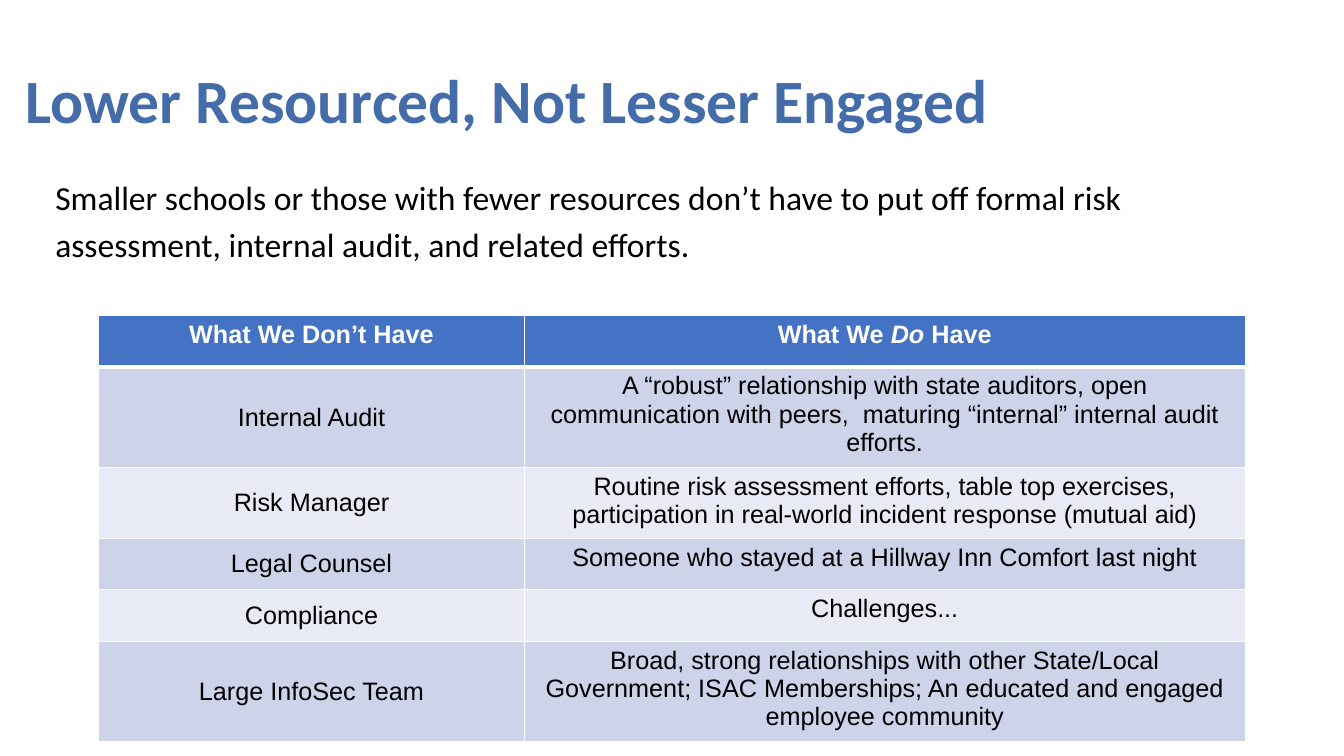
from lxml.etree import SubElement
from pptx import Presentation
from pptx.dml.color import RGBColor
from pptx.enum.text import MSO_ANCHOR, MSO_AUTO_SIZE, PP_ALIGN
from pptx.oxml.ns import qn
from pptx.util import Inches, Pt

TITLE_BLUE = RGBColor(0x44, 0x6C, 0xA9)
HEADER_BLUE = RGBColor(0x44, 0x72, 0xC4)
BAND_DARK = RGBColor(0xCD, 0xD4, 0xEA)
BAND_LIGHT = RGBColor(0xE8, 0xEB, 0xF5)
WHITE = RGBColor(0xFF, 0xFF, 0xFF)
BLACK = RGBColor(0x00, 0x00, 0x00)

COLUMN_WIDTHS = (4.22, 7.15)
HEADERS = (
    [("What We Don’t Have", False)],
    [("What We ", False), ("Do", True), (" Have", False)],
)
RESOURCES = (
    ("Internal Audit",
     "A “robust” relationship with state auditors, open communication "
     "with peers,  maturing “internal” internal audit efforts."),
    ("Risk Manager",
     "Routine risk assessment efforts, table top exercises, "
     "participation in real-world incident response (mutual aid)"),
    ("Legal Counsel",
     "Someone who stayed at a Hillway Inn Comfort last night"),
    ("Compliance", "Challenges..."),
    ("Large InfoSec Team",
     "Broad, strong relationships with other State/Local Government; "
     "ISAC Memberships; An educated and engaged employee community"),
)


def add_span(para, text, font, size, color, bold=False, italic=False):
    span = para.add_run()
    span.text = text
    span.font.name = font
    span.font.size = Pt(size)
    span.font.color.rgb = color
    span.font.bold = bold
    span.font.italic = italic


def place_title(page, left, top, width, height):
    title = page.shapes.title
    title.left, title.top = Inches(left), Inches(top)
    title.width, title.height = Inches(width), Inches(height)
    frame = title.text_frame
    frame.word_wrap = True
    frame.auto_size = MSO_AUTO_SIZE.NONE
    frame.vertical_anchor = MSO_ANCHOR.BOTTOM
    para = frame.paragraphs[0]
    para.alignment = PP_ALIGN.LEFT
    para.line_spacing = 0.9
    add_span(para, "Lower Resourced, Not Lesser Engaged",
             "Calibri", 44, TITLE_BLUE, bold=True)


def add_introduction(page, left, top, width, height):
    box = page.shapes.add_textbox(Inches(left), Inches(top),
                                  Inches(width), Inches(height))
    box.text_frame.word_wrap = True
    para = box.text_frame.paragraphs[0]
    para.line_spacing = 1.15
    add_span(para,
             "Smaller schools or those with fewer resources don’t have to put "
             "off formal risk assessment, internal audit, and related efforts.",
             "Calibri", 24, BLACK)


def draw_borders(cell, top, bottom):
    properties = cell._tc.get_or_add_tcPr()
    for side, points in (("L", 1), ("R", 1), ("T", top), ("B", bottom)):
        line = SubElement(properties, qn(f"a:ln{side}"), w=str(Pt(points)))
        fill = SubElement(line, qn("a:solidFill"))
        SubElement(fill, qn("a:srgbClr"), val=str(WHITE))


def fill_cell(cell, spans, row, anchor):
    header = row == 0
    draw_borders(cell, top=3 if row == 1 else 1, bottom=3 if header else 1)
    cell.fill.solid()
    band = BAND_DARK if row % 2 else BAND_LIGHT
    cell.fill.fore_color.rgb = HEADER_BLUE if header else band
    cell.vertical_anchor = anchor
    para = cell.text_frame.paragraphs[0]
    para.alignment = PP_ALIGN.CENTER
    for text, italic in spans:
        add_span(para, text, "Arial", 18, WHITE if header else BLACK,
                 bold=header, italic=italic)


def add_resource_table(page, left, top, row_height):
    row_count = len(RESOURCES) + 1
    table = page.shapes.add_table(
        row_count, len(COLUMN_WIDTHS), Inches(left), Inches(top),
        Inches(sum(COLUMN_WIDTHS)), Inches(row_height * row_count)).table
    for column, width in zip(table.columns, COLUMN_WIDTHS):
        column.width = Inches(width)
    for column, spans in enumerate(HEADERS):
        fill_cell(table.cell(0, column), spans, 0, MSO_ANCHOR.TOP)
    for row, (missing, available) in enumerate(RESOURCES, start=1):
        fill_cell(table.cell(row, 0), [(missing, False)], row, MSO_ANCHOR.MIDDLE)
        fill_cell(table.cell(row, 1), [(available, False)], row, MSO_ANCHOR.TOP)


def main():
    deck = Presentation()
    deck.slide_width, deck.slide_height = Inches(13.33), Inches(7.5)
    page = deck.slides.add_slide(deck.slide_layouts.get_by_name("Title Only"))
    place_title(page, 0.15, 0.6, 10.16, 0.81)
    add_introduction(page, 0.45, 1.65, 11.34, 1.08)
    add_resource_table(page, 0.98, 3.13, 0.51)
    deck.save("out.pptx")


if __name__ == "__main__":
    main()
